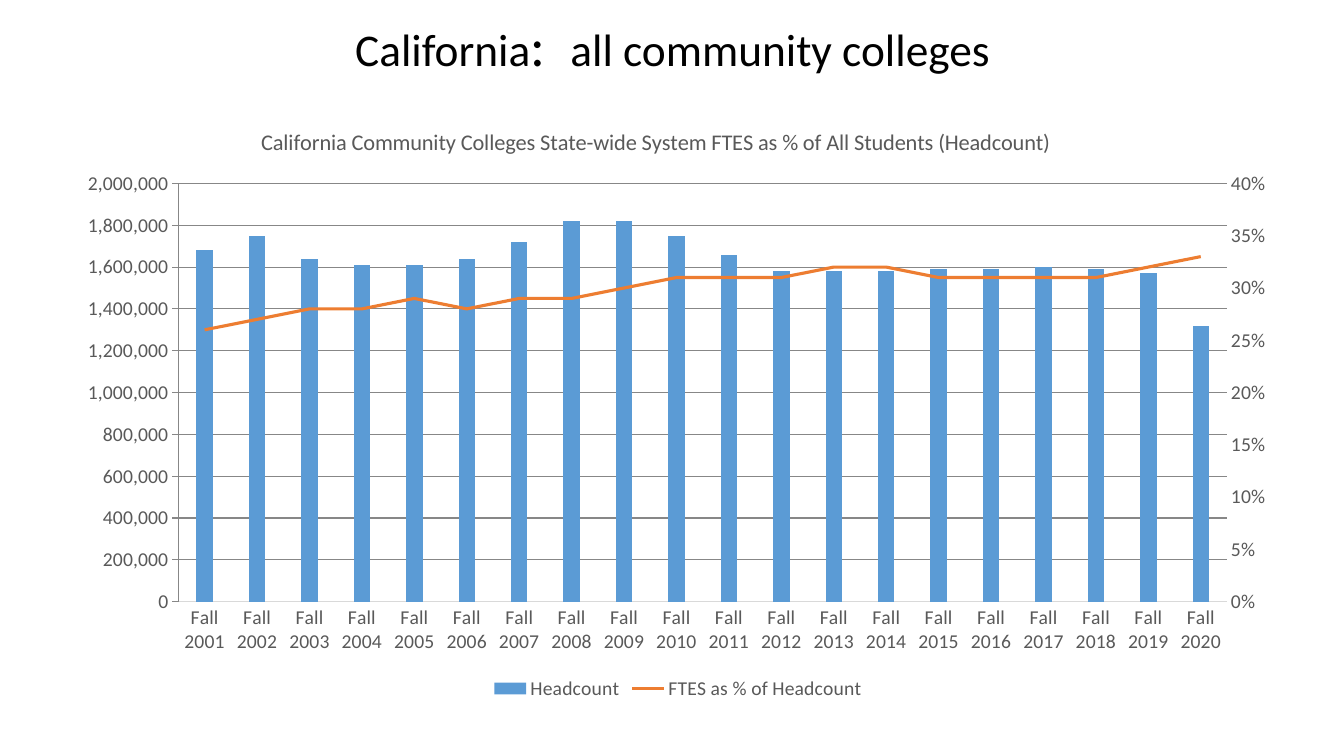
"""Builds a slide charting California community college headcount and FTES share."""
from pptx import Presentation
from pptx.chart.axis import ValueAxis
from pptx.chart.data import CategoryChartData
from pptx.dml.color import RGBColor
from pptx.enum.chart import XL_CHART_TYPE, XL_LEGEND_POSITION, XL_MARKER_STYLE, XL_TICK_MARK
from pptx.enum.text import MSO_ANCHOR, MSO_AUTO_SIZE, PP_ALIGN
from pptx.oxml import parse_xml
from pptx.oxml.ns import nsdecls, qn
from pptx.util import Inches, Pt

COLUMN = XL_CHART_TYPE.COLUMN_CLUSTERED
LEGEND_BOTTOM = XL_LEGEND_POSITION.BOTTOM
NO_MARKER = XL_MARKER_STYLE.NONE
NO_TICK = XL_TICK_MARK.NONE
BOTTOM = MSO_ANCHOR.BOTTOM
NO_AUTOFIT = MSO_AUTO_SIZE.NONE
CENTER = PP_ALIGN.CENTER

THEME = {
    "font": "Calibri",
    "title": RGBColor(0x00, 0x00, 0x00),
    "label": RGBColor(0x59, 0x59, 0x59),
    "grid": RGBColor(0xD9, 0xD9, 0xD9),
    "headcount": RGBColor(0x5B, 0x9B, 0xD5),
    "share": RGBColor(0xED, 0x7D, 0x31),
    "title_size": 32.4,
    "colon_size": 39.6,
    "chart_title_size": 16,
    "label_size": 14,
    "grid_width": 0.75,
    "share_width": 2.25,
}

TITLE_RUNS = [
    ("California", "title_size"),
    (":  ", "colon_size"),
    ("all community colleges", "title_size"),
]
CHART_TITLE = "California Community Colleges State-wide System FTES as % of All Students (Headcount)"
TERMS = [f"Fall {year}" for year in range(2001, 2021)]
HEADCOUNT = [
    1680000, 1750000, 1640000, 1610000, 1610000, 1640000, 1720000, 1820000, 1820000, 1750000,
    1660000, 1580000, 1580000, 1580000, 1590000, 1590000, 1600000, 1590000, 1570000, 1320000,
]
SHARE = [
    0.26, 0.27, 0.28, 0.28, 0.29, 0.28, 0.29, 0.29, 0.30, 0.31,
    0.31, 0.31, 0.32, 0.32, 0.31, 0.31, 0.31, 0.31, 0.32, 0.33,
]

TITLE_BOX = (0.92, 0.64, 11.5, 0.34)
CHART_BOX = (0.66, 0.98, 12.13, 6.01)
PLOT_BOX = (1.77, 1.82, 10.4, 4.15)
CHART_TITLE_CORNER = (2.55, 1.22)

LINE_CHART = (
    f'<c:lineChart {nsdecls("c")}><c:grouping val="standard"/><c:varyColors val="0"/>'
    '<c:marker val="1"/><c:axId val="5001"/><c:axId val="5002"/></c:lineChart>'
)
RIGHT_AXES = [
    f'<c:valAx {nsdecls("c")}><c:axId val="5002"/><c:scaling/><c:delete val="0"/>'
    '<c:axPos val="r"/><c:tickLblPos val="nextTo"/><c:crossAx val="5001"/>'
    '<c:crosses val="max"/></c:valAx>',
    f'<c:catAx {nsdecls("c")}><c:axId val="5001"/><c:scaling/><c:delete val="1"/>'
    '<c:axPos val="b"/><c:crossAx val="5002"/><c:crosses val="autoZero"/></c:catAx>',
]


def set_attributes(target, values):
    """Set every attribute named in a dict."""
    for name, value in values.items():
        setattr(target, name, value)


def style_font(font, size, color):
    """Apply a theme size and colour to a font."""
    set_attributes(font, {"name": THEME["font"], "size": Pt(THEME[size]), "bold": False})
    font.color.rgb = THEME[color]


def style_line(line, color, width):
    """Apply a theme colour and width to a line."""
    line.color.rgb = THEME[color]
    line.width = Pt(THEME[width])


def style_value_axis(axis, maximum, step, number_format):
    """Scale a value axis and hide its line."""
    set_attributes(axis, {"minimum_scale": 0, "maximum_scale": maximum, "major_unit": step})
    set_attributes(axis.tick_labels, {"number_format": number_format,
                                      "number_format_is_linked": False})
    axis.format.line.fill.background()


def remove_children(element, tag):
    """Remove every child that has the given tag."""
    for child in element.findall(qn(tag)):
        element.remove(child)


def place(element, position, box, target=""):
    """Give a chart part a fixed place measured on the slide."""
    remove_children(element, "c:layout")
    left, top, width, height = CHART_BOX
    shares = [(box[0] - left) / width, (box[1] - top) / height]
    shares += [size / whole for size, whole in zip(box[2:], (width, height))]
    modes = '<c:xMode val="edge"/><c:yMode val="edge"/>'
    sizes = "".join(f'<c:{name} val="{share:.4f}"/>' for name, share in zip("xywh", shares))
    element.insert(position, parse_xml(
        f'<c:layout {nsdecls("c")}><c:manualLayout>{target}{modes}{sizes}'
        '</c:manualLayout></c:layout>'))


def move_share_to_right_axis(chart):
    """Turn the second series into a line on its own axis and return that axis."""
    columns = chart.plots[0]._element
    plot_area = columns.getparent()
    series = columns.findall(qn("c:ser"))[1]
    remove_children(series, "c:invertIfNegative")
    line_chart = parse_xml(LINE_CHART)
    line_chart.insert(2, series)
    columns.addnext(line_chart)
    value_axis, category_axis = [parse_xml(xml) for xml in RIGHT_AXES]
    plot_area.find(qn("c:valAx")).addnext(value_axis)
    value_axis.addnext(category_axis)
    place(plot_area, 0, PLOT_BOX, '<c:layoutTarget val="inner"/>')
    return ValueAxis(value_axis)


def add_title(slide):
    """Fill the title placeholder."""
    title = slide.shapes.title
    set_attributes(title, dict(zip(("left", "top", "width", "height"), map(Inches, TITLE_BOX))))
    set_attributes(title.text_frame, {"word_wrap": True, "auto_size": NO_AUTOFIT,
                                      "vertical_anchor": BOTTOM, "margin_bottom": Inches(0.2)})
    paragraph = title.text_frame.paragraphs[0]
    set_attributes(paragraph, {"alignment": CENTER, "line_spacing": 0.9})
    for text, size in TITLE_RUNS:
        run = paragraph.add_run()
        run.text = text
        style_font(run.font, size, "title")


def add_headcount_chart(slide):
    """Add the columns with the share line over them."""
    data = CategoryChartData()
    data.categories = TERMS
    data.add_series("Headcount", HEADCOUNT, "#,##0")
    data.add_series("FTES as % of Headcount", SHARE, "0%")
    chart = slide.shapes.add_chart(COLUMN, *map(Inches, CHART_BOX), data).chart
    style_font(chart.font, "label_size", "label")

    chart.has_title = True
    paragraph = chart.chart_title.text_frame.paragraphs[0]
    run = paragraph.add_run()
    run.text = CHART_TITLE
    style_font(run.font, "chart_title_size", "label")
    place(chart.chart_title._element, 1, CHART_TITLE_CORNER)

    chart.has_legend = True
    set_attributes(chart.legend, {"position": LEGEND_BOTTOM, "include_in_layout": False})
    style_font(chart.legend.font, "label_size", "label")

    right_axis = move_share_to_right_axis(chart)
    style_value_axis(chart.value_axis, 2000000, 200000, "#,##0")
    style_value_axis(right_axis, 0.4, 0.05, "0%")
    right_axis.has_major_gridlines = False
    style_line(chart.value_axis.major_gridlines.format.line, "grid", "grid_width")
    style_line(chart.category_axis.format.line, "grid", "grid_width")
    for axis in (chart.category_axis, chart.value_axis, right_axis):
        set_attributes(axis, {"major_tick_mark": NO_TICK, "minor_tick_mark": NO_TICK})
        style_font(axis.tick_labels.font, "label_size", "label")

    columns, lines = chart.plots
    set_attributes(columns, {"gap_width": 219, "overlap": -27, "vary_by_categories": False})
    fill = columns.series[0].format.fill
    fill.solid()
    fill.fore_color.rgb = THEME["headcount"]
    share = lines.series[0]
    share.smooth = False
    share.marker.style = NO_MARKER
    style_line(share.format.line, "share", "share_width")


def main():
    """Build and save the presentation."""
    presentation = Presentation()
    set_attributes(presentation, {"slide_width": Inches(13.33), "slide_height": Inches(7.5)})
    slide = presentation.slides.add_slide(presentation.slide_layouts.get_by_name("Title Only"))
    add_title(slide)
    add_headcount_chart(slide)
    presentation.save("out.pptx")


if __name__ == "__main__":
    main()
